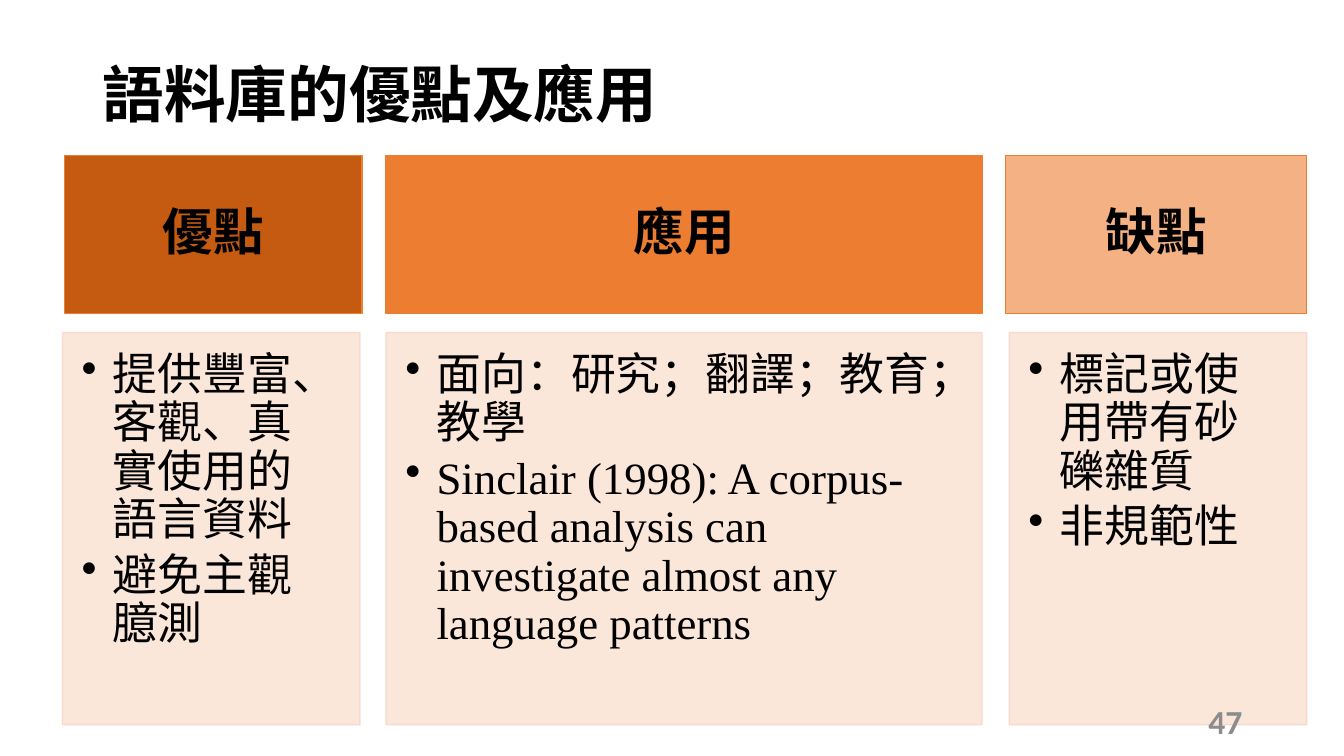
from pptx import Presentation
from pptx.dml.color import RGBColor
from pptx.enum.shapes import MSO_SHAPE
from pptx.enum.text import MSO_ANCHOR, PP_ALIGN
from pptx.oxml.ns import qn
from pptx.util import Inches, Pt
from lxml.etree import SubElement

THEME = {
    "cjk": "Noto Sans CJK SC", "latin": "Times New Roman", "number": "Calibri",
    "text": "000000", "muted": "8C8C8C", "accent": "ED7D31",
    "panel": "FBE5D6", "panel_line": "F8D7CE",
    "title_size": 44, "header_size": 36, "body_size": 32, "number_size": 24,
}

HEADER = {"top": 1.54, "height": 1.57, "insets": (0.04, 0.02, 0.04, 0.02)}
PANEL = {"top": 3.3, "height": 3.89, "insets": (0.19, 0.19, 0.25, 0.28)}

# Each column: heading, header colour, header (left, width), panel (left, width), points
COLUMNS = [
    ("優點", "C55A11", (0.64, 2.95), (0.62, 2.95),
     [("提供豐富、客觀、真實使用的語言資料", "cjk"), ("避免主觀臆測", "cjk")]),
    ("應用", "ED7D31", (3.83, 5.91), (3.83, 5.91),
     [("面向：研究；翻譯；教育；教學", "cjk"),
      ("Sinclair (1998): A corpus-based analysis can investigate almost any "
       "language patterns", "latin")]),
    ("缺點", "F4B183", (9.97, 2.99), (10.01, 2.95),
     [("標記或使用帶有砂礫雜質", "cjk"), ("非規範性", "cjk")]),
]


def write(paragraph, text, font_name, size, color="text", bold=False, **layout):
    """Add one styled run and apply the paragraph layout."""
    for name, value in layout.items():
        setattr(paragraph, name, value)
    run = paragraph.add_run()
    run.text = text
    formats = {"name": THEME[font_name], "size": Pt(THEME[size]), "bold": bold}
    for name, value in formats.items():
        setattr(run.font, name, value)
    run.font.color.rgb = RGBColor.from_string(THEME[color])
    SubElement(run.font._element, qn("a:ea"), typeface=THEME[font_name])


def add_block(place, block, fill, line, anchor):
    """Add a filled rectangle ready for text."""
    left, width = place
    shape = slide.shapes.add_shape(
        MSO_SHAPE.RECTANGLE, Inches(left), Inches(block["top"]),
        Inches(width), Inches(block["height"]))
    shape.shadow.inherit = False
    shape.fill.solid()
    shape.fill.fore_color.rgb = RGBColor.from_string(fill)
    shape.line.color.rgb = RGBColor.from_string(line)
    shape.line.width = Pt(1)
    frame = shape.text_frame
    frame.word_wrap = True
    frame.vertical_anchor = anchor
    for side, inset in zip(("left", "top", "right", "bottom"), block["insets"]):
        setattr(frame, f"margin_{side}", Inches(inset))
    return shape


presentation = Presentation()
presentation.slide_width = Inches(13.33)
presentation.slide_height = Inches(7.5)
slide = presentation.slides.add_slide(presentation.slide_layouts[6])

# Title
title = slide.shapes.add_textbox(Inches(0.92), Inches(0.24), Inches(11.5), Inches(1.45))
title.text_frame.word_wrap = True
title.text_frame.vertical_anchor = MSO_ANCHOR.MIDDLE
write(title.text_frame.paragraphs[0], "語料庫的優點及應用", "cjk", "title_size",
      bold=True, line_spacing=0.9)

# Three columns, each a header over a panel of bullets
for heading, color, header_place, panel_place, points in COLUMNS:
    header = add_block(header_place, HEADER, color, THEME["accent"], MSO_ANCHOR.MIDDLE)
    write(header.text_frame.paragraphs[0], heading, "cjk", "header_size", bold=True,
          alignment=PP_ALIGN.CENTER, line_spacing=0.9)

    panel = add_block(panel_place, PANEL, THEME["panel"], THEME["panel_line"],
                      MSO_ANCHOR.TOP)
    for color_element in panel._element.spPr.iter(qn("a:srgbClr")):
        SubElement(color_element, qn("a:alpha"), val="90000")
    for index, (point, font_name) in enumerate(points):
        frame = panel.text_frame
        paragraph = frame.add_paragraph() if index else frame.paragraphs[0]
        write(paragraph, point, font_name, "body_size", level=1,
              alignment=PP_ALIGN.LEFT, line_spacing=0.9, space_after=Pt(5))
        properties = paragraph._p.get_or_add_pPr()
        properties.set("marL", str(Inches(0.31)))
        properties.set("indent", str(Inches(-0.31)))
        SubElement(properties, qn("a:buChar"), char="•")

# Slide number
number = slide.shapes.add_textbox(Inches(9.42), Inches(6.95), Inches(3), Inches(0.4))
number.text_frame.word_wrap = True
number.text_frame.vertical_anchor = MSO_ANCHOR.MIDDLE
write(number.text_frame.paragraphs[0], "47", "number", "number_size",
      color="muted", bold=True, alignment=PP_ALIGN.RIGHT)

presentation.save("out.pptx")
